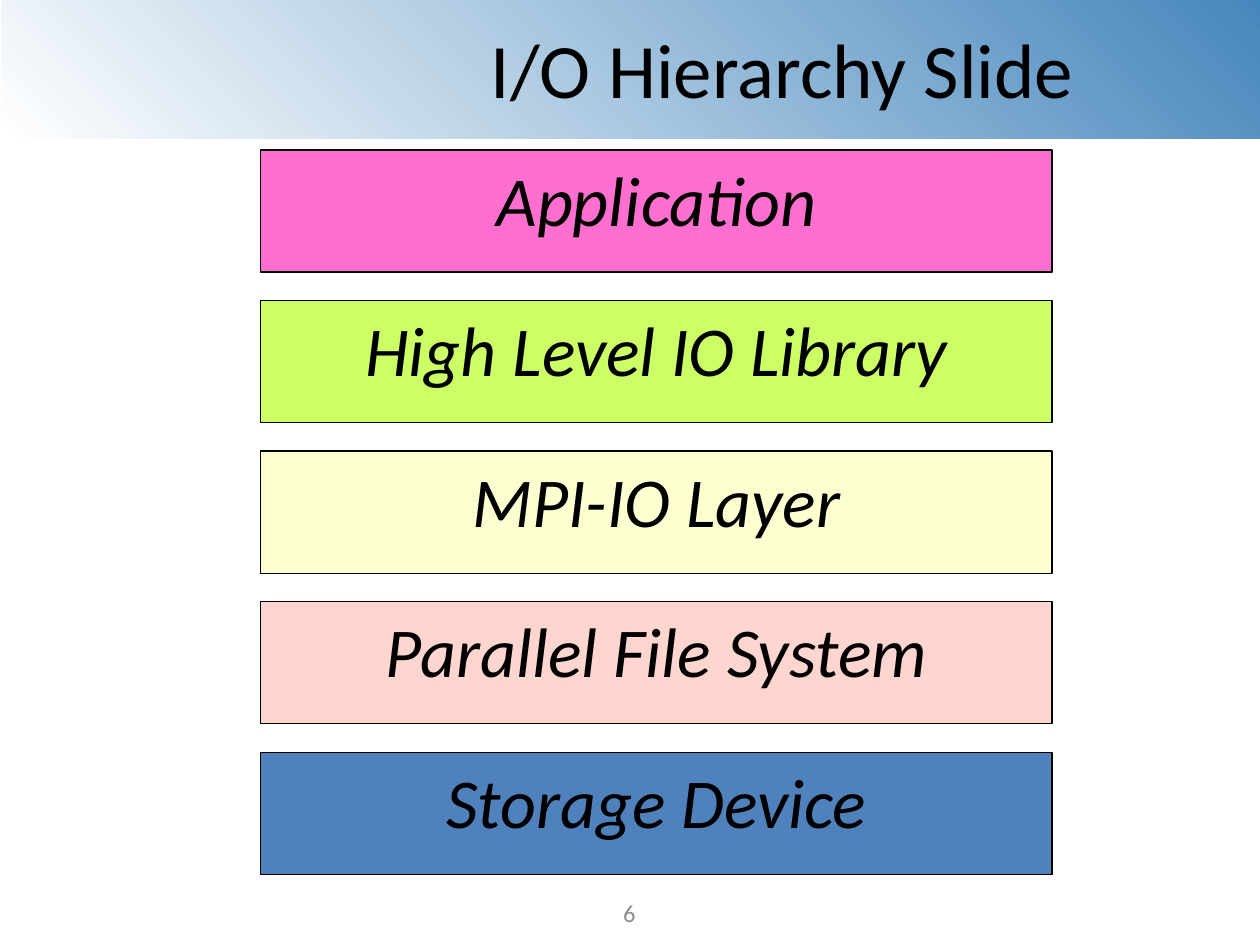
import pptx
import pptx.util
import pptx.dml.color
import pptx.enum.shapes
import pptx.enum.text
import pptx.oxml
import pptx.oxml.ns

TITLE = "I/O Hierarchy Slide"
PAGE_NUMBER = "6"
LAYERS = [
    ("Application", "pink"),
    ("High Level IO Library", "lime"),
    ("MPI-IO Layer", "cream"),
    ("Parallel File System", "rose"),
    ("Storage Device", "blue"),
]
COLORS = {
    "pink": "FF6FCF",
    "lime": "CCFF66",
    "cream": "FEFFD1",
    "rose": "FFD5CF",
    "blue": "4F81BD",
    "band": "4687BC",
    "white": "FFFFFF",
    "black": "000000",
    "grey": "8C8C8C",
}
FONT = "Calibri"
TITLE_FORMAT = {"size": pptx.util.Pt(44), "name": FONT}
LAYER_FORMAT = {"size": pptx.util.Pt(40), "name": FONT, "italic": True}
NUMBER_FORMAT = {"size": pptx.util.Pt(14), "name": FONT}

WIDTH, HEIGHT = 10, 7.5
BAND = (0.01, 0, WIDTH, 1.1)
TITLE_BOX = (2.5, 0.12, 7.42, 0.84)
NUMBER_BOX = (3.83, 7.08, 2.33, 0.33)
STACK_LEFT, STACK_TOP, LAYER_WIDTH, LAYER_HEIGHT = 2.07, 1.19, 6.28, 0.97
LAYER_PITCH = (5.97 - STACK_TOP) / (len(LAYERS) - 1)

ANCHOR = pptx.enum.text.MSO_ANCHOR
RECTANGLE = pptx.enum.shapes.MSO_SHAPE.RECTANGLE


def inches(box):
    return [pptx.util.Inches(length) for length in box]


def rgb(color):
    return pptx.dml.color.RGBColor.from_string(COLORS[color])


def write(part, text, font_format, color, anchor):
    frame = part.text_frame
    frame.text = text
    frame.word_wrap = True
    frame.vertical_anchor = anchor
    paragraph = frame.paragraphs[0]
    paragraph.alignment = pptx.enum.text.PP_ALIGN.CENTER
    font = paragraph.runs[0].font
    for attribute, value in font_format.items():
        setattr(font, attribute, value)
    font.color.rgb = rgb(color)


def add_band(slide):
    band = slide.shapes.add_shape(RECTANGLE, *inches(BAND))
    band.shadow.inherit = False
    band.line.fill.background()
    band.fill.gradient()
    for stop, color in zip(band.fill.gradient_stops, ("band", "white")):
        stop.color.rgb = rgb(color)
    direction = band.element.spPr.find(".//" + pptx.oxml.ns.qn("a:lin"))
    radial = pptx.oxml.parse_xml(
        f'<a:path {pptx.oxml.ns.nsdecls("a")} path="circle">'
        '<a:fillToRect l="100000" b="100000"/></a:path>'
    )
    direction.getparent().replace(direction, radial)
    slide.shapes.title.element.addprevious(band.element)


def add_title(slide):
    title = slide.shapes.title
    title.left, title.top, title.width, title.height = inches(TITLE_BOX)
    write(title, TITLE, TITLE_FORMAT, "black", ANCHOR.MIDDLE)


def add_layers(slide):
    for row, (label, color) in enumerate(LAYERS):
        top = STACK_TOP + row * LAYER_PITCH
        layer = slide.shapes.add_shape(
            RECTANGLE, *inches((STACK_LEFT, top, LAYER_WIDTH, LAYER_HEIGHT))
        )
        layer.shadow.inherit = False
        layer.fill.solid()
        layer.fill.fore_color.rgb = rgb(color)
        layer.line.color.rgb = rgb("black")
        layer.line.width = pptx.util.Pt(0.75)
        write(layer, label, LAYER_FORMAT, "black", ANCHOR.TOP)


def main():
    deck = pptx.Presentation()
    deck.slide_width, deck.slide_height = inches((WIDTH, HEIGHT))
    slide = deck.slides.add_slide(deck.slide_layouts[5])
    add_band(slide)
    add_title(slide)
    add_layers(slide)
    number = slide.shapes.add_textbox(*inches(NUMBER_BOX))
    write(number, PAGE_NUMBER, NUMBER_FORMAT, "grey", ANCHOR.MIDDLE)
    deck.save("out.pptx")


if __name__ == "__main__":
    main()
